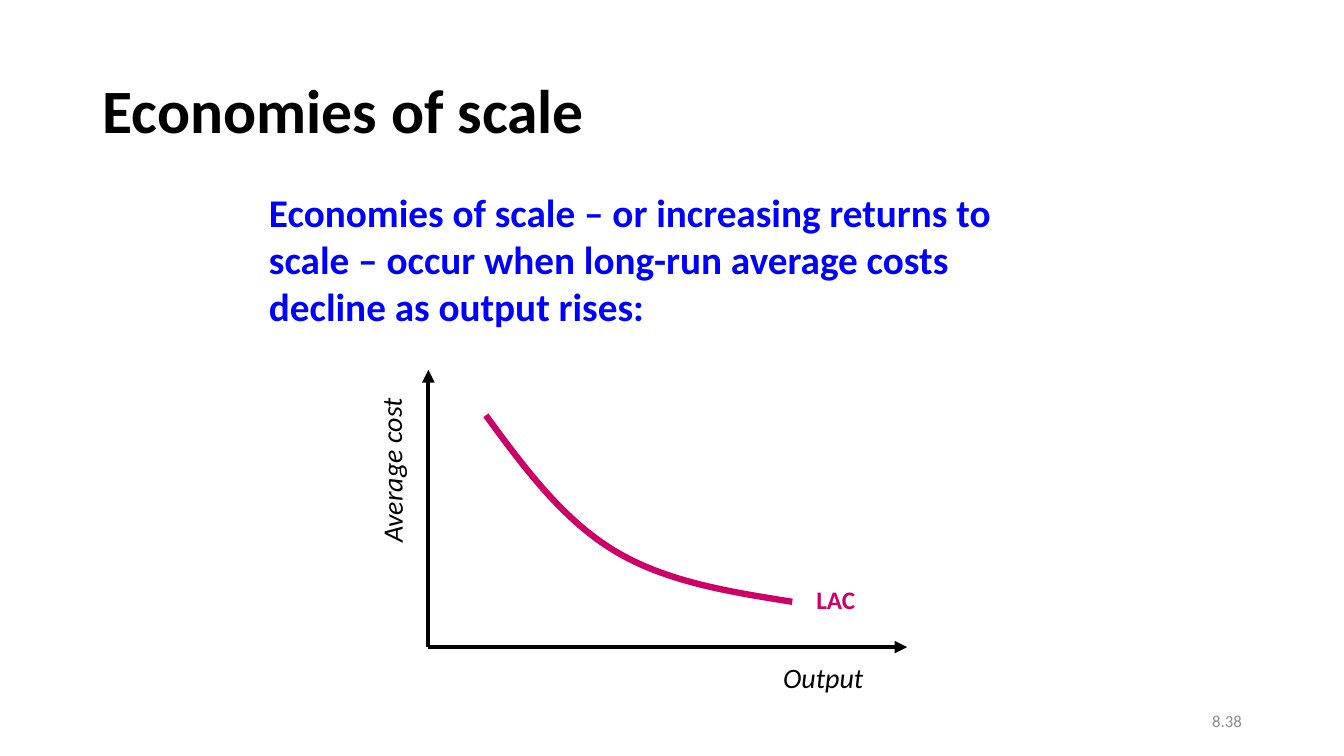
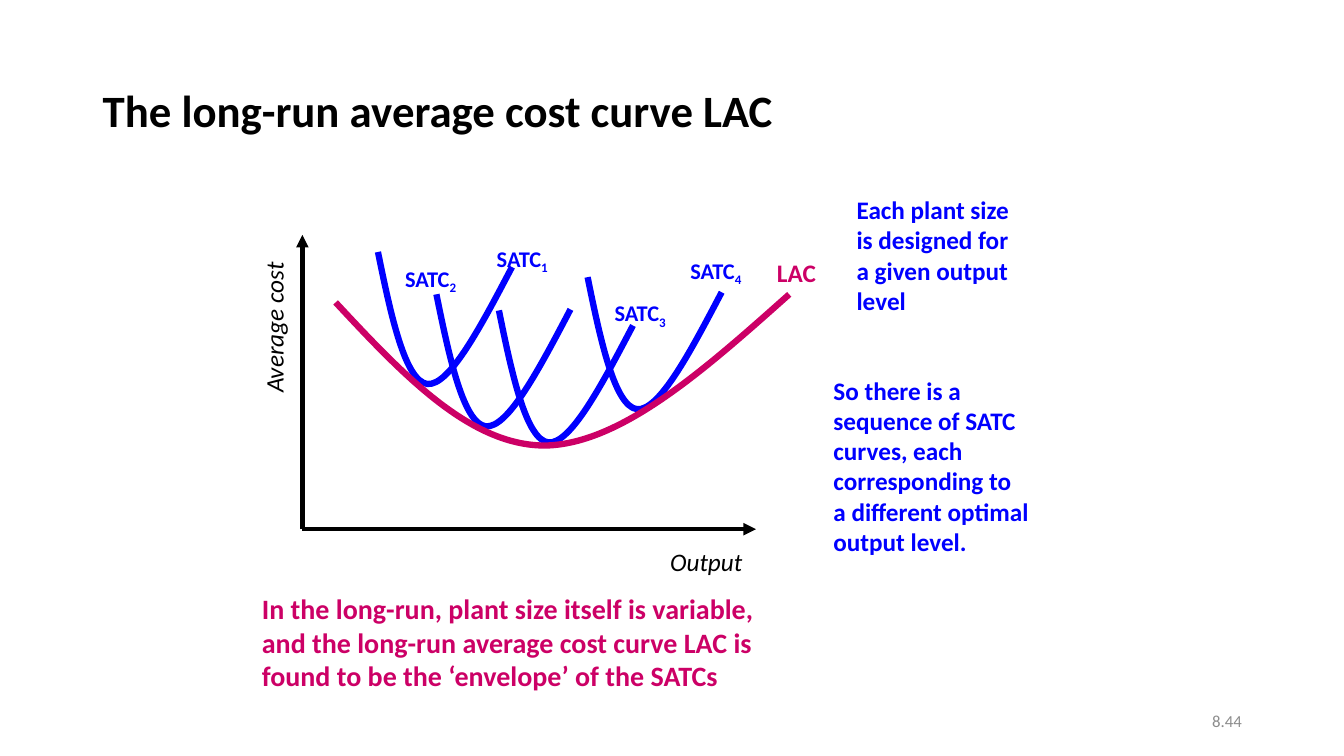
from dataclasses import dataclass

from lxml import etree
from pptx import Presentation
from pptx.dml.color import RGBColor
from pptx.enum.shapes import MSO_CONNECTOR
from pptx.enum.text import MSO_ANCHOR, MSO_AUTO_SIZE, PP_ALIGN
from pptx.oxml.ns import qn
from pptx.util import Inches, Pt

BLACK = RGBColor(0x00, 0x00, 0x00)
BLUE = RGBColor(0x00, 0x00, 0xFF)
MAGENTA = RGBColor(0xCC, 0x00, 0x66)
GREY = RGBColor(0x8C, 0x8C, 0x8C)

FONT = "Calibri"
STRAIGHT = MSO_CONNECTOR.STRAIGHT
MIDDLE = MSO_ANCHOR.MIDDLE
RIGHT = PP_ALIGN.RIGHT
GROW = MSO_AUTO_SIZE.SHAPE_TO_FIT_TEXT
BLANK_LAYOUT = 6
SLIDE_HEIGHT = 7.5

Point = tuple[float, float]
Box = tuple[float, float, float, float]


@dataclass(frozen=True)
class Style:
    size: int
    color: RGBColor
    bold: bool = False
    italic: bool = False


@dataclass(frozen=True)
class Label:
    box: Box
    lines: tuple[str, ...]
    style: Style
    subscript: str = ""
    rotation: float = 0


@dataclass(frozen=True)
class Axes:
    origin: Point
    right: float
    top: float


@dataclass(frozen=True)
class Curve:
    points: tuple[Point, ...]
    color: RGBColor


@dataclass(frozen=True)
class CostSlide:
    title: str
    title_size: int
    number: str
    axes: Axes
    curves: tuple[Curve, ...]
    labels: tuple[Label, ...]


SATC_SHAPE = ((0, 0), (0.13, 0.64), (0.27, 1.28), (0.49, 1.31),
              (0.71, 1.33), (1.02, 0.74), (1.33, 0.15))
SATC_STYLE = Style(16, BLUE, bold=True)
NOTE_STYLE = Style(18, BLUE, bold=True)
LAC_STYLE = Style(18, MAGENTA, bold=True)


def satc_curve(left: float, top: float) -> Curve:
    return Curve(tuple((left + x, top + y) for x, y in SATC_SHAPE), BLUE)


def satc_label(left: float, top: float, number: str) -> Label:
    return Label((left, top, 0.73, 0.37), ("SATC",), SATC_STYLE, number)


def lac_label(left: float, top: float) -> Label:
    return Label((left, top, 0.59, 0.4), ("LAC",), LAC_STYLE)


def axis_labels(size: int, output: Box, cost: Box,
                cost_rotation: float) -> tuple[Label, Label]:
    style = Style(size, BLACK, italic=True)
    return (Label(output, ("Output",), style),
            Label(cost, ("Average cost",), style, rotation=cost_rotation))


SLIDES = (
    CostSlide(
        "Economies of scale", 44, "8.38",
        Axes((4.25, 6.42), 9, 3.67),
        (Curve(((4.82, 4.12), (5.2, 4.64), (5.58, 5.15), (6.09, 5.46),
                (6.6, 5.77), (7.23, 5.87), (7.86, 5.97)), MAGENTA),),
        (
            Label((2.57, 1.82, 7.44, 1.51),
                  ("Economies of scale – or increasing returns to",
                   "scale – occur when long-run average costs",
                   "decline as output rises:"),
                  Style(28, BLUE, bold=True)),
            lac_label(8, 5.75),
            *axis_labels(20, (7.67, 6.5, 1.03, 0.43),
                         (3.06, 4.44, 1.65, 0.44), 269.5),
        ),
    ),
    CostSlide(
        "The long-run average cost curve LAC", 32, "8.44",
        Axes((3, 5.25), 7.5, 2.33),
        (
            satc_curve(3.75, 2.5),
            satc_curve(4.33, 2.92),
            satc_curve(5.83, 2.75),
            satc_curve(4.95, 3.08),
            Curve(((3.33, 3), (4, 3.72), (4.67, 4.43), (5.42, 4.42),
                   (6.17, 4.4), (7, 3.66), (7.83, 2.92)), MAGENTA),
        ),
        (
            *axis_labels(18, (6.55, 5.37, 0.95, 0.4),
                         (1.96, 3.04, 1.51, 0.4), 270),
            satc_label(4.83, 2.38, "1"),
            Label((8.4, 1.88, 1.73, 1.31),
                  ("Each plant size", "is designed for", "a given output", "level"),
                  NOTE_STYLE),
            satc_label(3.92, 2.58, "2"),
            satc_label(6, 2.92, "3"),
            satc_label(6.75, 2.5, "4"),
            Label((8.17, 3.67, 2.22, 1.92),
                  ("So there is a", "sequence of SATC", "curves, each",
                   "corresponding to", "a different optimal", "output level."),
                  NOTE_STYLE),
            lac_label(7.61, 2.5),
            Label((2.5, 5.82, 5.18, 1.11),
                  ("In the long-run, plant size itself is variable,",
                   "and the long-run average cost curve LAC is",
                   "found to be the ‘envelope’ of the SATCs"),
                  Style(20, MAGENTA, bold=True)),
        ),
    ),
)


def add_run(paragraph, text: str, style: Style):
    run = paragraph.add_run()
    run.text = text
    font = run.font
    font.name = FONT
    font.size = Pt(style.size)
    font.bold = style.bold
    font.italic = style.italic
    font.color.rgb = style.color
    return run


def add_text_box(slide, box: Box):
    return slide.shapes.add_textbox(*(Inches(length) for length in box))


def add_label(slide, label: Label) -> None:
    shape = add_text_box(slide, label.box)
    shape.rotation = label.rotation
    frame = shape.text_frame
    frame.word_wrap = False
    frame.auto_size = GROW
    for index, line in enumerate(label.lines):
        paragraph = frame.add_paragraph() if index else frame.paragraphs[0]
        add_run(paragraph, line, label.style)
    if label.subscript:
        run = add_run(paragraph, label.subscript, label.style)
        run.font._element.set("baseline", "-25000")


def add_framed_line(slide, box: Box, text: str, style: Style):
    frame = add_text_box(slide, box).text_frame
    frame.word_wrap = True
    frame.vertical_anchor = MIDDLE
    paragraph = frame.paragraphs[0]
    add_run(paragraph, text, style)
    return paragraph


def add_title(slide, text: str, size: int) -> None:
    style = Style(size, BLACK, bold=True)
    paragraph = add_framed_line(slide, (0.92, 0.4, 11.5, 1.45), text, style)
    paragraph.line_spacing = 0.9


def add_slide_number(slide, number: str) -> None:
    paragraph = add_framed_line(slide, (9.42, 6.95, 3, 0.4), number, Style(12, GREY))
    paragraph.alignment = RIGHT


def add_arrow(slide, start: Point, end: Point) -> None:
    connector = slide.shapes.add_connector(
        STRAIGHT, *(Inches(length) for length in (*start, *end)))
    connector.line.color.rgb = BLACK
    connector.line.width = Pt(3)
    line = connector.line._get_or_add_ln()
    etree.SubElement(line, qn("a:tailEnd"), type="triangle")
    etree.SubElement(connector._element.spPr, qn("a:effectLst"))


def add_axes(slide, axes: Axes) -> None:
    x, y = axes.origin
    add_arrow(slide, axes.origin, (axes.right, y))
    add_arrow(slide, axes.origin, (x, axes.top))


def bend_segments(shape) -> None:
    outline = next(shape._element.iter(qn("a:path")))
    segments = outline.findall(qn("a:lnTo"))
    for first in range(0, len(segments), 3):
        bend = etree.SubElement(outline, qn("a:cubicBezTo"))
        for segment in segments[first:first + 3]:
            bend.append(segment[0])
            outline.remove(segment)


def add_curve(slide, curve: Curve) -> None:
    start, *controls = [(Inches(x), Inches(y)) for x, y in curve.points]
    builder = slide.shapes.build_freeform(*start)
    builder.add_line_segments(controls, close=False)
    shape = builder.convert_to_shape()
    bend_segments(shape)
    shape.shadow.inherit = False
    shape.fill.background()
    shape.line.color.rgb = curve.color
    shape.line.width = Pt(4.5)


def add_cost_slide(presentation, content: CostSlide) -> None:
    slide = presentation.slides.add_slide(presentation.slide_layouts[BLANK_LAYOUT])
    add_slide_number(slide, content.number)
    add_title(slide, content.title, content.title_size)
    add_axes(slide, content.axes)
    for curve in content.curves:
        add_curve(slide, curve)
    for label in content.labels:
        add_label(slide, label)


def main() -> None:
    presentation = Presentation()
    presentation.slide_width = Inches(SLIDE_HEIGHT * 16 / 9)
    presentation.slide_height = Inches(SLIDE_HEIGHT)
    for content in SLIDES:
        add_cost_slide(presentation, content)
    presentation.save("out.pptx")


if __name__ == "__main__":
    main()
